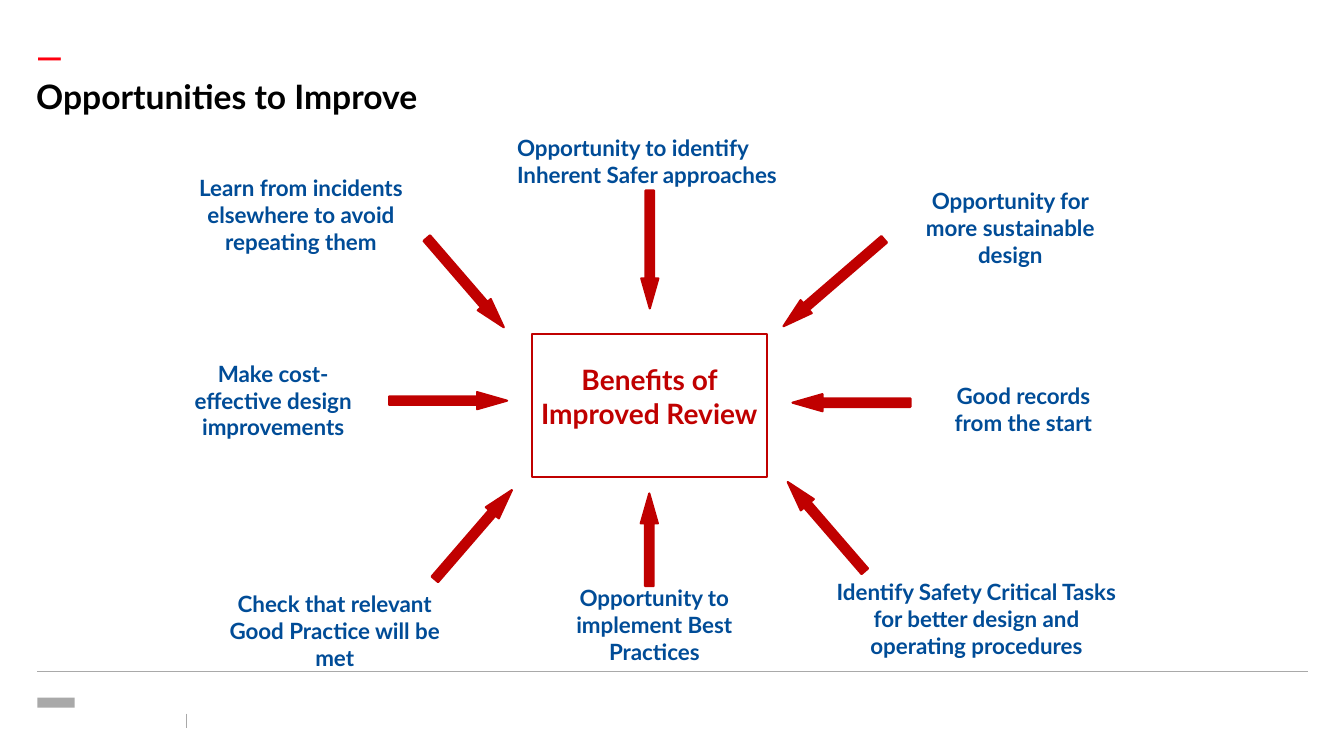
"""Build the slide on opportunities to improve, with eight benefits around a review box."""
from lxml.etree import SubElement
from pptx import Presentation
from pptx.dml.color import RGBColor
from pptx.enum.shapes import MSO_CONNECTOR, MSO_SHAPE
from pptx.enum.text import MSO_ANCHOR, PP_ALIGN
from pptx.oxml.ns import qn
from pptx.util import Inches, Pt

RED, BLUE, GREY = "C00000", "004C97", "A9A9A9"


def color(value):
    return RGBColor.from_string(value)


def write(text, left, top, width, height, size=16, ink=BLUE,
          align=PP_ALIGN.CENTER, anchor=MSO_ANCHOR.TOP, inset=(0.1, 0.05)):
    box = slide.shapes.add_textbox(Inches(left), Inches(top), Inches(width), Inches(height))
    frame = box.text_frame
    frame.word_wrap = True
    frame.vertical_anchor = anchor
    frame.margin_left = frame.margin_right = Inches(inset[0])
    frame.margin_top = frame.margin_bottom = Inches(inset[1])
    para = frame.paragraphs[0]
    para.text = text
    para.alignment = align
    para.font.name = "Lato"
    para.font.size = Pt(size)
    para.font.bold = True
    para.font.color.rgb = color(ink)


deck = Presentation()
deck.slide_width, deck.slide_height = Inches(13.33), Inches(7.5)
slide = deck.slides.add_slide(deck.slide_layouts[6])

for x1, y1, x2, y2 in [(0.37, 6.66, 12.97, 6.66), (1.85, 7.08, 1.85, 7.22)]:
    rule = slide.shapes.add_connector(
        MSO_CONNECTOR.STRAIGHT, Inches(x1), Inches(y1), Inches(x2), Inches(y2))
    rule.line.color.rgb = color(GREY)
    rule.line.width = Pt(1)
    SubElement(rule._element.spPr, qn("a:effectLst"))

mark = slide.shapes.add_shape(
    MSO_SHAPE.RECTANGLE, Inches(0.37), Inches(6.92), Inches(0.37), Inches(0.1))
mark.shadow.inherit = False
mark.fill.solid()
mark.fill.fore_color.rgb = color(GREY)
mark.line.fill.background()

write("—", 0.26, 0.47, 0.6, 0.17, size=24, ink="FF000F",
      align=PP_ALIGN.LEFT, anchor=MSO_ANCHOR.MIDDLE)
write("Opportunities to Improve", 0.36, 0.75, 12.6, 0.43, size=24, ink="000000",
      align=PP_ALIGN.LEFT, inset=(0, 0))

hub = slide.shapes.add_shape(
    MSO_SHAPE.RECTANGLE, Inches(5.28), Inches(3.31), Inches(2.33), Inches(1.42))
hub.shadow.inherit = False
hub.fill.background()
hub.line.color.rgb = color(RED)
hub.line.width = Pt(1.5)
write("Benefits of Improved Review", 5.19, 3.55, 2.5, 0.77, size=20, ink=RED)

arrows = [
    (5.98, 5.27, 0.92, 270),
    (5.86, 2.39, 1.17, 90),
    (7.61, 2.72, 1.32, 139.2),
    (4.03, 2.72, 1.17, 49.2),
    (7.61, 5.14, 1.17, 229.2),
    (7.86, 3.91, 1.17, 180),
    (4.11, 5.22, 1.17, 310.8),
    (3.86, 3.89, 1.17, 0),
]
for left, top, length, turn in arrows:
    arrow = slide.shapes.add_shape(
        MSO_SHAPE.RIGHT_ARROW, Inches(left), Inches(top), Inches(length), Inches(0.17))
    arrow.shadow.inherit = False
    arrow.adjustments[0], arrow.adjustments[1] = 0.5, 1.75
    arrow.rotation = turn
    arrow.fill.solid()
    arrow.fill.fore_color.rgb = color(RED)
    arrow.line.color.rgb = color(RED)
    arrow.line.width = Pt(1.5)

labels = [
    ("Opportunity to implement Best Practices", 5.28, 5.75, 2.42, 0.91),
    ("Opportunity for more sustainable design", 8.93, 1.81, 2.18, 0.91),
    ("Learn from incidents elsewhere to avoid repeating them", 1.56, 1.68, 2.85, 0.91),
    ("Identify Safety Critical Tasks for better design and operating procedures",
     8.12, 5.69, 3.13, 0.91),
    ("Good records from the start", 9.19, 3.74, 1.92, 0.64),
    ("Check that relevant Good Practice will be met", 2.11, 5.81, 2.42, 0.91),
    ("Make cost-effective design improvements", 1.64, 3.52, 2.14, 0.91),
]
for label in labels:
    write(*label)
write("Opportunity to identify Inherent Safer approaches", 5.03, 1.28, 3.1, 0.64,
      align=PP_ALIGN.LEFT)

deck.save("out.pptx")
